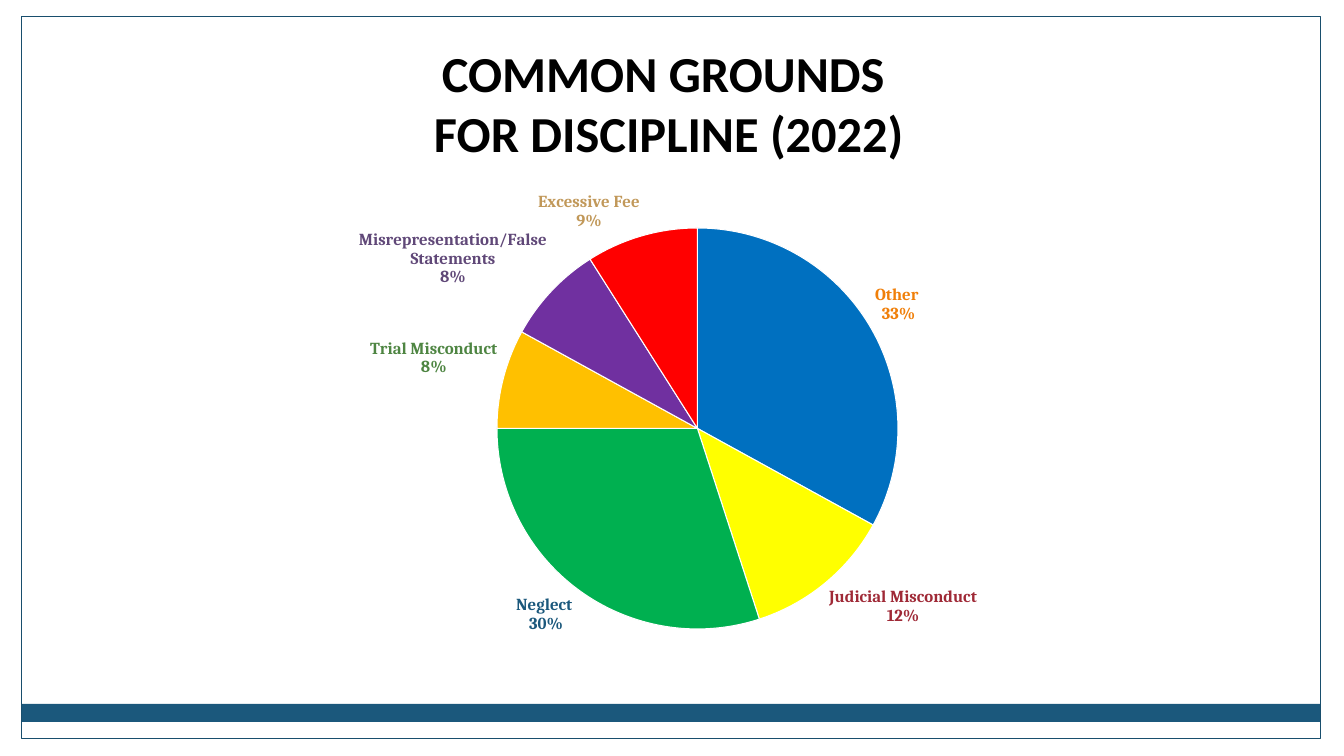
from lxml.etree import SubElement
from pptx import Presentation
from pptx.chart.data import CategoryChartData
from pptx.dml.color import RGBColor
from pptx.enum.chart import XL_CHART_TYPE, XL_LABEL_POSITION
from pptx.enum.shapes import MSO_SHAPE
from pptx.enum.text import MSO_ANCHOR, MSO_AUTO_SIZE, PP_ALIGN
from pptx.oxml.ns import qn
from pptx.util import Pt

# Content
TITLE = "COMMON GROUNDS \vFOR DISCIPLINE (2022)"
rgb = RGBColor.from_string
GROUNDS = [  # name, percent, slice colour, label colour
    ("Other ", 33, rgb("0070C0"), rgb("F07F09")),
    ("Judicial Misconduct", 12, rgb("FFFF00"), rgb("9F2936")),
    ("Neglect ", 30, rgb("00B050"), rgb("1B587C")),
    ("Trial Misconduct", 8, rgb("FFC000"), rgb("4E8542")),
    ("Misrepresentation/False Statements", 8, rgb("7030A0"), rgb("604878")),
    ("Excessive Fee", 9, rgb("FF0000"), rgb("C19859")),
]
BLACK = RGBColor(0, 0, 0)
WHITE = RGBColor(255, 255, 255)
BAND_BLUE = rgb("1B587C")
FRAME_BLUE = rgb("184E6D")

# Places in px: left, top, width, height
PX = 9072  # EMU, at 100.8 px to the inch
SLIDE_SIZE = (1344, 756)
BAND = (22, 704, 1299, 18)
FRAME = (22, 17, 1299, 722)
TITLE_BOX = (98, 76, 1142, 92)
CHART_BOX = (44, 168, 1250, 504)
PIE_BOX = (497, 228, 401, 401)


def emu(box):
    return [length * PX for length in box]


def add_rect(shapes, box):
    rect = shapes.add_shape(MSO_SHAPE.RECTANGLE, *emu(box))
    rect.shadow.inherit = False
    return rect


prs = Presentation()
prs.slide_width, prs.slide_height = emu(SLIDE_SIZE)
slide = prs.slides.add_slide(prs.slide_layouts[5])

# Bottom band and frame
band = add_rect(slide.shapes, BAND)
band.fill.solid()
band.fill.fore_color.rgb = BAND_BLUE
band.line.fill.background()
frame = add_rect(slide.shapes, FRAME)
frame.fill.background()
frame.line.color.rgb = FRAME_BLUE
frame.line.width = Pt(0.75)

# Title
title = slide.shapes.title
title.left, title.top, title.width, title.height = emu(TITLE_BOX)
title.text_frame.text = TITLE
title.text_frame.auto_size = MSO_AUTO_SIZE.NONE
title.text_frame.vertical_anchor = MSO_ANCHOR.BOTTOM
heading = title.text_frame.paragraphs[0]
heading.alignment = PP_ALIGN.CENTER
heading.font.name = "Calibri"
heading.font.size = Pt(36)
heading.font.bold = True
heading.font.color.rgb = BLACK

# Pie chart
data = CategoryChartData()
data.categories = [name for name, *_ in GROUNDS]
data.add_series("Series 1", [percent for _, percent, *_ in GROUNDS])
chart = slide.shapes.add_chart(XL_CHART_TYPE.PIE, *emu(CHART_BOX), data).chart
chart.has_title = False
chart.has_legend = False
chart.font.name = "Cambria"
chart.font.size = Pt(10)
chart.font.color.rgb = BLACK
plot = chart.plots[0]
plot.vary_by_categories = True

# Slices and their labels
for i, (_, _, slice_colour, label_colour) in enumerate(GROUNDS):
    point = plot.series[0].points[i]
    point.format.fill.solid()
    point.format.fill.fore_color.rgb = slice_colour
    point.format.line.color.rgb = WHITE
    point.format.line.width = Pt(0.75)
    label = point.data_label
    label.font.name = "Cambria"
    label.font.size = Pt(12)
    label.font.bold = True
    label.font.color.rgb = label_colour
    label.position = XL_LABEL_POSITION.OUTSIDE_END

# Labels show name and percentage on separate lines
for label in chart.element.iter(qn("c:dLbl")):
    for tag, shown in (("showVal", "0"), ("showCatName", "1"), ("showPercent", "1")):
        label.find(qn(f"c:{tag}")).set("val", shown)
    SubElement(label, qn("c:separator")).text = "\n"

# Pie position as fractions of the chart
plot_area = chart.element.find(f".//{qn('c:plotArea')}")
for old in plot_area.findall(qn("c:layout")):
    plot_area.remove(old)
layout = plot_area.makeelement(qn("c:layout"))
plot_area.insert(0, layout)
manual = SubElement(layout, qn("c:manualLayout"))
left, top, width, height = CHART_BOX
pie_left, pie_top, pie_width, pie_height = PIE_BOX
for tag, value in (
    ("layoutTarget", "inner"), ("xMode", "edge"), ("yMode", "edge"),
    ("x", (pie_left - left) / width), ("y", (pie_top - top) / height),
    ("w", pie_width / width), ("h", pie_height / height),
):
    SubElement(manual, qn(f"c:{tag}")).set("val", str(value))

prs.save("out.pptx")
